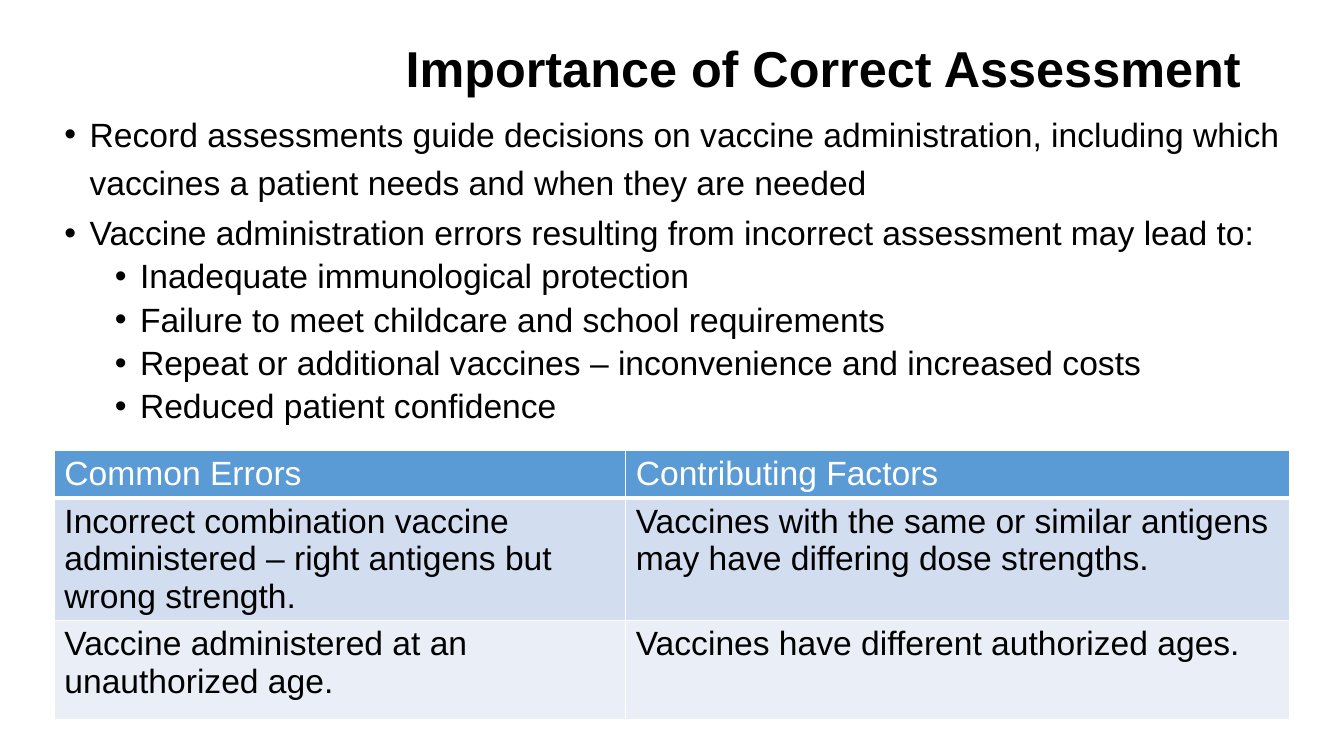
from lxml.etree import SubElement
from pptx import Presentation
from pptx.dml.color import RGBColor
from pptx.enum.text import MSO_ANCHOR, MSO_AUTO_SIZE, PP_ALIGN
from pptx.oxml.ns import qn
from pptx.util import Cm, Pt

BLACK = RGBColor(0x00, 0x00, 0x00)
WHITE = RGBColor(0xFF, 0xFF, 0xFF)
HEADER_BLUE = RGBColor(0x5B, 0x9B, 0xD5)
BAND_DARK = RGBColor(0xD2, 0xDE, 0xEF)
BAND_LIGHT = RGBColor(0xEA, 0xEF, 0xF7)

# (level, line spacing, text)
POINTS = [
    (0, 1.2, "Record assessments guide decisions on vaccine administration, "
             "including which vaccines a patient needs and when they are needed"),
    (0, 0.9, "Vaccine administration errors resulting from incorrect assessment may lead to:"),
    (1, 0.9, "Inadequate immunological protection"),
    (1, 0.9, "Failure to meet childcare and school requirements"),
    (1, 0.9, "Repeat or additional vaccines – inconvenience and increased costs"),
    (1, 0.9, "Reduced patient confidence"),
]
ERRORS = [
    ("Common Errors", "Contributing Factors"),
    ("Incorrect combination vaccine administered – right antigens but wrong strength.",
     "Vaccines with the same or similar antigens may have differing dose strengths."),
    ("Vaccine administered at an unauthorized age.",
     "Vaccines have different authorized ages."),
]


class SlideBuilder:
    font = "Arial"
    title_size = Pt(36)
    text_size = Pt(24)

    def __init__(self, slide):
        self.slide = slide

    def format_runs(self, p, size, color, bold=False):
        for r in p.runs:
            r.font.name = self.font
            r.font.size = size
            r.font.bold = bold
            r.font.color.rgb = color

    def place(self, sp, left, top, width, height):
        sp.left, sp.top, sp.width, sp.height = map(Cm, (left, top, width, height))
        sp.text_frame.word_wrap = True
        sp.text_frame.auto_size = MSO_AUTO_SIZE.NONE

    def title(self, text, *box):
        sp = self.slide.shapes.title
        self.place(sp, *box)
        tf = sp.text_frame
        tf.text = text
        tf.vertical_anchor = MSO_ANCHOR.BOTTOM
        tf.margin_bottom = Cm(0.53)
        p = tf.paragraphs[0]
        p.alignment = PP_ALIGN.CENTER
        p.line_spacing = 0.9
        self.format_runs(p, self.title_size, BLACK, bold=True)

    def bullets(self, points, *box):
        sp = self.slide.placeholders[1]
        self.place(sp, *box)
        tf = sp.text_frame
        for i, (level, spacing, text) in enumerate(points):
            p = tf.add_paragraph() if i else tf.paragraphs[0]
            p.text = text
            p.level = level
            p.line_spacing = spacing
            p.space_before = Pt(10 - 5 * level) if i else Pt(0)
            pPr = p._p.get_or_add_pPr()
            pPr.set("marL", str(Cm(0.635 + 1.27 * level)))
            pPr.set("indent", str(Cm(-0.635)))
            SubElement(pPr, qn("a:buFont"), typeface=self.font)
            SubElement(pPr, qn("a:buChar"), char="•")
            self.format_runs(p, self.text_size, BLACK)

    def border(self, cell, side, points):
        ln = SubElement(cell._tc.get_or_add_tcPr(), qn(f"a:ln{side}"), w=str(Pt(points)))
        fill = SubElement(ln, qn("a:solidFill"))
        SubElement(fill, qn("a:srgbClr"), val=str(WHITE))

    def table(self, rows, left, top, widths, heights):
        box = map(Cm, (left, top, sum(widths), sum(heights)))
        table = self.slide.shapes.add_table(len(rows), len(widths), *box).table
        for column, width in zip(table.columns, widths):
            column.width = Cm(width)
        for row, height in zip(table.rows, heights):
            row.height = Cm(height)
        fills = (HEADER_BLUE, BAND_DARK, BAND_LIGHT)
        for i, (texts, color) in enumerate(zip(rows, fills)):
            for j, text in enumerate(texts):
                cell = table.cell(i, j)
                cell.text = text
                for side in "LRTB":
                    self.border(cell, side, 3 if i == 0 and side == "B" else 1)
                cell.fill.solid()
                cell.fill.fore_color.rgb = color
                self.format_runs(cell.text_frame.paragraphs[0], self.text_size,
                                 BLACK if i else WHITE)


def main():
    prs = Presentation()
    prs.slide_width, prs.slide_height = Cm(33.87), Cm(19.05)
    s = SlideBuilder(prs.slides.add_slide(prs.slide_layouts[1]))
    s.title("Importance of Correct Assessment", 6.15, -0.66, 29.2, 3.68)
    s.bullets(POINTS, 1.37, 2.54, 31.72, 9.5)
    s.table(ERRORS, 1.37, 11.35, (14.4, 16.74), (1.14, 2.97, 2.51))
    prs.save("out.pptx")


if __name__ == "__main__":
    main()
